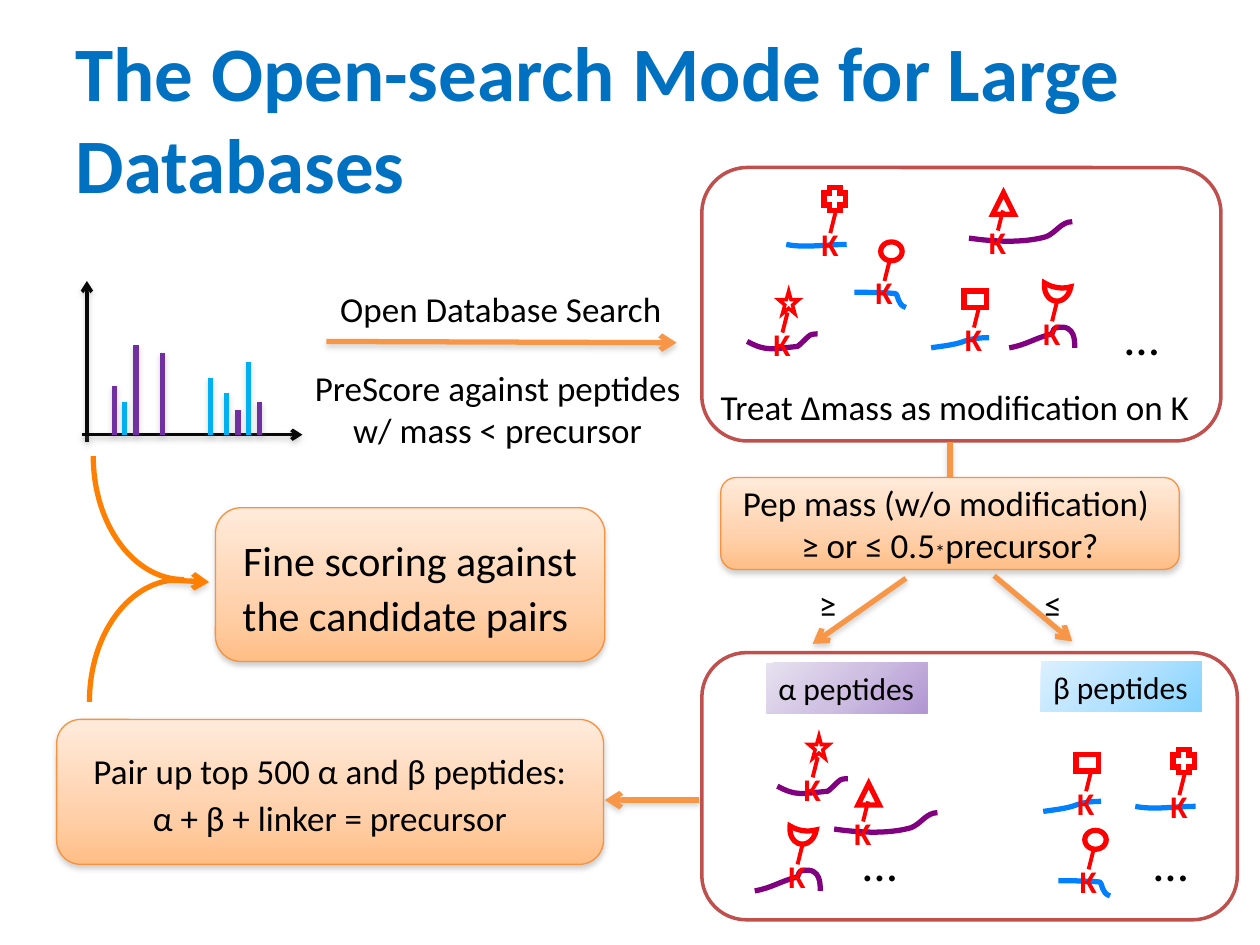
import pptx
import pptx.dml.color
import pptx.enum.shapes
import pptx.enum.text
import pptx.oxml
import pptx.oxml.ns
import pptx.shapes.base
import pptx.util
from dataclasses import dataclass
from typing import Any, Optional

Inches, Pt = pptx.util.Inches, pptx.util.Pt
MSO = pptx.enum.shapes.MSO_SHAPE
ALIGN, ANCHOR = pptx.enum.text.PP_ALIGN, pptx.enum.text.MSO_ANCHOR
GROW = pptx.enum.text.MSO_AUTO_SIZE.SHAPE_TO_FIT_TEXT
Shape = pptx.shapes.base.BaseShape
Point = tuple[float, float]
NS = pptx.oxml.ns.nsdecls("a")
qn = pptx.oxml.ns.qn

BLACK, RED, ORANGE, PANEL = "000000", "FF0000", "F79646", "C0504D"
PURPLE, BLUE, ARC = "800080", "0080FF", "FF8000"
PEACH = [(0, "FFEBDB"), (65, "FFD0AA"), (100, "FFBE86")]
LILAC = [(0, "E7E1F0"), (50, "CFC0E2"), (100, "B196D2")]
SKY = [(0, "DBF0FF"), (50, "B5E2FF"), (100, "83D3FF")]


@dataclass
class Peptide:
    """A strand with a K and a modification symbol; offsets are from the strand's start."""
    color: str
    strand: list[Point]
    k: Point
    symbol: Any
    box: tuple[float, float, float, float]
    weight: float = 3
    rotation: float = 0


@dataclass
class Process:
    box: tuple[float, float, float, float]
    size: float
    runs: list[Any]
    spacing: float = 1.0


STAR = Peptide(PURPLE, [(0, 0), (.15, .08), (.19, .06), (.4, .04), (.43, .02), (.46, -.02),
                        (.5, -.05), (.52, -.06), (.56, -.06), (.56, -.06)],
               (.11, -.18), MSO.STAR_5_POINT, (.25, -.4, .16, .18), weight=2)
TRIANGLE = Peptide(PURPLE, [(0, 0), (.2, .03), (.43, .04), (.61, -.01), (.69, -.04),
                            (.73, -.13), (.82, -.13)],
                   (.06, -.17), MSO.ISOSCELES_TRIANGLE, (.19, -.36, .17, .17))
MOON = Peptide(PURPLE, [(0, 0), (.13, -.02), (.21, -.08), (.34, -.11), (.35, -.13), (.35, -.16),
                        (.38, -.16), (.53, -.19), (.52, -.04), (.52, 0)],
               (.17, -.32), MSO.MOON, (.31, -.54, .13, .21), rotation=278.4)
CIRCLE = Peptide(BLUE, [(0, 0), (.11, 0), (.22, 0), (.33, .01), (.35, .02), (.34, .1), (.41, .12)],
                 (.07, -.2), MSO.OVAL, (.21, -.4, .17, .15))
SQUARE = Peptide(BLUE, [(0, 0), (.07, -.01), (.16, -.02), (.23, -.04), (.31, -.07),
                        (.37, -.08), (.46, -.08)],
                 (.17, -.27), MSO.RECTANGLE, (.26, -.45, .18, .13))
CROSS = Peptide(BLUE, [(0, 0), (.14, .03), (.32, 0), (.48, 0)],
                (.18, -.2), MSO.CROSS, (.3, -.45, .17, .18))

PEPTIDES = [
    (STAR, 5.93, 2.71), (TRIANGLE, 7.69, 1.89), (CIRCLE, 6.78, 2.32),
    (MOON, 8.01, 2.76), (SQUARE, 7.39, 2.76), (CROSS, 6.24, 1.94),
    (STAR, 6.17, 6.24), (TRIANGLE, 6.62, 6.58), (MOON, 5.99, 7.07),
    (CROSS, 9.01, 6.4), (CIRCLE, 8.4, 6.99), (SQUARE, 8.28, 6.44),
]
PEAKS = {
    "7030A0": [(.91, 3.06), (1.08, 2.74), (1.29, 2.8), (1.89, 3.25), (2.06, 3.19)],
    "00B0F0": [(.99, 3.19), (1.67, 3), (1.8, 3.12), (1.97, 2.87)],
}
DECISION = Process((5.72, 3.79, 3.64, .73), 20, [
    "Pep mass (w/o modification) \n≥ or ≤ 0.5", ("*", -2), "precursor?"])
PAIRING = Process((.45, 5.71, 4.34, 1.15), 20, [
    "Pair up top 500 α and β peptides:\n α + β + linker = precursor "], 1.1)
SCORING = Process((1.71, 4.03, 3.09, 1.22), 24, [
    "Fine scoring against the candidate pairs "], 1.1)

prs = pptx.Presentation()
prs.slide_width, prs.slide_height = Inches(10), Inches(7.5)
slide = prs.slides.add_slide(prs.slide_layouts[5])
shapes = slide.shapes


def rgb(color: str) -> pptx.dml.color.RGBColor:
    return pptx.dml.color.RGBColor.from_string(color)


def outline(s: Any, color: str, weight: float) -> None:
    s.line.color.rgb = rgb(color)
    s.line.width = Pt(weight)


def set_effect(s: Any, alpha: int = 0, dist: float = 0) -> None:
    """Give a soft downward shadow, or none when alpha is 0."""
    for old in s._element.spPr.findall(qn("a:effectLst")):
        s._element.spPr.remove(old)
    shadow = (f'<a:outerShdw blurRad="40000" dist="{Pt(dist)}" dir="5400000" rotWithShape="0">'
              f'<a:srgbClr val="808080"><a:alpha val="{alpha}000"/></a:srgbClr></a:outerShdw>')
    s._element.spPr.append(
        pptx.oxml.parse_xml(f'<a:effectLst {NS}>{shadow if alpha else ""}</a:effectLst>'))


def set_gradient(s: Any, stops: list[tuple[int, str]], angle: int) -> None:
    gs = "".join(f'<a:gs pos="{pos}000"><a:srgbClr val="{c}"/></a:gs>' for pos, c in stops)
    s._element.spPr.find(qn("a:prstGeom")).addnext(pptx.oxml.parse_xml(
        f'<a:gradFill rotWithShape="1" {NS}><a:gsLst>{gs}</a:gsLst>'
        f'<a:lin ang="{angle * 60000}" scaled="0"/></a:gradFill>'))


def write(s: Any, *runs: Any, size: float, color: str = BLACK, bold: bool = False,
          align: Any = ALIGN.LEFT, anchor: Any = ANCHOR.TOP, wrap: bool = True,
          spacing: float = 1.0, grow: bool = False) -> None:
    """Write runs, each a string or a (string, baseline percent) pair, as one paragraph."""
    tf = s.text_frame
    tf.word_wrap, tf.vertical_anchor = wrap, anchor
    if grow:
        tf.auto_size = GROW
    p = tf.paragraphs[0]
    p.alignment, p.line_spacing = align, spacing
    for run in runs:
        text, baseline = run if isinstance(run, tuple) else (run, 0)
        for i, part in enumerate(text.split("\n")):
            if i:
                p.add_line_break()
            r = p.add_run()
            r.text = part
            r.font.name, r.font.size, r.font.bold = "Calibri", Pt(size), bold
            r.font.color.rgb = rgb(color)
            if baseline:
                r._r.get_or_add_rPr().set("baseline", str(baseline * 1000))


def label(x: float, y: float, w: float, h: float, text: str, size: float = 20,
          **style: Any) -> None:
    s = shapes.add_textbox(Inches(x), Inches(y), Inches(w), Inches(h))
    write(s, text, size=size, grow=True, **style)


def preset(kind: Any, x: float, y: float, w: float, h: float, color: Optional[str] = None,
           weight: float = 1) -> Shape:
    s = shapes.add_shape(kind, Inches(x), Inches(y), Inches(w), Inches(h))
    s.shadow.inherit = False
    if color:
        s.fill.background()
        outline(s, color, weight)
        s.line._get_or_add_ln().append(pptx.oxml.parse_xml(f'<a:miter lim="800000" {NS}/>'))
    else:
        s.line.fill.background()
    return s


def line(start: Point, end: Point, color: str = ORANGE, weight: float = 3, arrow: bool = False,
         alpha: int = 35, dist: float = 1.8) -> Any:
    s = shapes.add_connector(pptx.enum.shapes.MSO_CONNECTOR.STRAIGHT,
                             *(Inches(v) for v in (*start, *end)))
    outline(s, color, weight)
    if arrow:
        s.line._get_or_add_ln().append(pptx.oxml.parse_xml(f'<a:tailEnd type="arrow" {NS}/>'))
    set_effect(s, alpha, dist)
    return s


def curve(points: list[Point], color: str) -> None:
    """Draw joined cubic Bézier segments: a start, then two controls and an end for each."""
    start, *rest = [(Inches(x), Inches(y)) for x, y in points]
    builder = shapes.build_freeform(*start)
    builder.add_line_segments(rest, close=False)
    s = builder.convert_to_shape()
    legs = list(s._element.spPr.iter(qn("a:lnTo")))
    for i in range(0, len(legs), 3):
        bezier = pptx.oxml.parse_xml(f'<a:cubicBezTo {NS}/>')
        legs[i].addprevious(bezier)
        for leg in legs[i:i + 3]:
            bezier.append(leg[0])
            leg.getparent().remove(leg)
    s.shadow.inherit = False
    s.fill.background()
    outline(s, color, 3)


def peptide(kind: Peptide, x: float, y: float) -> None:
    curve([(x + dx, y + dy) for dx, dy in kind.strand], kind.color)
    kx, ky = x + kind.k[0], y + kind.k[1]
    label(kx, ky, .34, .4, "K", size=18, color=RED, bold=True, wrap=False)
    line((kx + .21, ky - .05), (kx + .17, ky + .11), RED, 2.25, alpha=0)
    dx, dy, w, h = kind.box
    s = preset(kind.symbol, x + dx, y + dy, w, h, RED, kind.weight)
    s.rotation = kind.rotation
    if kind is MOON:
        s.adjustments[0] = .833
    if kind is STAR:
        s.fill.solid()
        s.fill.fore_color.rgb = rgb("FFFFFF")


def process(step: Process) -> Shape:
    s = preset(MSO.ROUNDED_RECTANGLE, *step.box)
    set_gradient(s, PEACH, 90)
    outline(s, "F69240", .75)
    set_effect(s, 38, 1.6)
    write(s, *step.runs, size=step.size, align=ALIGN.CENTER, anchor=ANCHOR.MIDDLE,
          spacing=step.spacing)
    return s


title = shapes.title
title.left, title.top, title.width, title.height = (Inches(v) for v in (.5, .3, 9, 1.25))
write(title, "The Open-search Mode for Large Databases", size=44, color="0070C0", bold=True,
      anchor=ANCHOR.MIDDLE)
# Spectrum
for start, end in [((.69, 3.51), (.69, 2.23)), ((.65, 3.45), (2.4, 3.45))]:
    line(start, end, "080808", 2, arrow=True, alpha=38, dist=1.6)
for peak_color, peaks in PEAKS.items():
    for peak_x, peak_top in peaks:
        line((peak_x, 3.45), (peak_x, peak_top), peak_color)
# Open search and its candidates
line((2.59, 2.71), (5.37, 2.72), arrow=True)
label(2.58, 2.23, 2.79, .43, "Open Database Search", align=ALIGN.CENTER)
label(2.37, 2.86, 3.16, .77, "PreScore against peptides w/ mass < precursor", align=ALIGN.CENTER)
label(5.62, 3.01, 3.98, .43, "Treat Δmass as modification on K")
for panel_box in [(5.57, 1.33, 4.12, 2.17), (5.57, 5.18, 4.25, 2.12)]:
    preset(MSO.ROUNDED_RECTANGLE, *panel_box, PANEL, 2)
for placed in PEPTIDES:
    peptide(*placed)
for dots_x, dots_y in [(8.83, 2.38), (6.75, 6.56), (9.06, 6.56)]:
    label(dots_x, dots_y, .47, .57, "…", size=28, wrap=False)
# Split by mass
stem = line((7.54, 3.51), (7.54, 3.79))
stem.end_connect(process(DECISION), 0)
for start, end, sign, sign_x in [((7.19, 4.59), (6.45, 5.11), "≥", 6.4),
                                 ((7.89, 4.57), (8.51, 5.09), "≤", 8.19)]:
    line(start, end, arrow=True)
    label(sign_x, 4.57, .35, .43, sign, wrap=False)
for tag_x, tag_y, text, stops in [(6.08, 5.26, "α peptides", LILAC),
                                  (8.26, 5.25, "β peptides", SKY)]:
    tag = preset(MSO.RECTANGLE, tag_x, tag_y, 1.28, .4)
    set_gradient(tag, stops, 45)
    write(tag, text, size=18, wrap=False, grow=True)
# Pairing and fine scoring
process(PAIRING)
line((5.55, 6.35), (4.8, 6.35), arrow=True)
curve([(1.46, 4.6), (1.06, 4.6), (.74, 4.16), (.74, 3.62)], ARC)
curve([(1.43, 4.6), (1.03, 4.6), (.71, 5.03), (.71, 5.57)], ARC)
line((1.29, 4.6), (1.66, 4.62), ARC, arrow=True)
process(SCORING)
prs.save("out.pptx")
